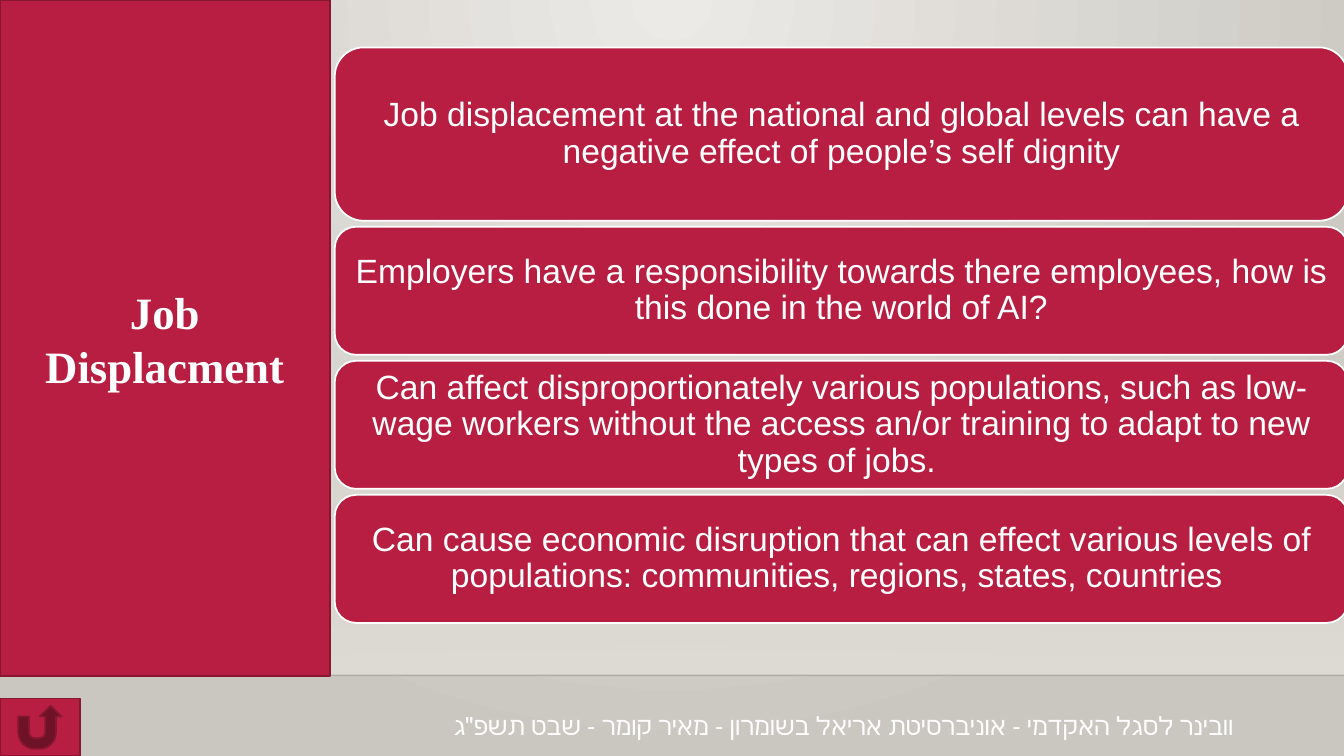
from pptx import Presentation
from pptx.dml.color import RGBColor
from pptx.enum import shapes, text
from pptx.oxml import parse_xml
from pptx.oxml.ns import nsdecls, qn
from pptx.util import Inches, Pt
from lxml import etree

# Content
TITLE = "Job Displacment"
POINTS = [  # wording, height of its box
    ("Job displacement at the national and global levels can have a "
     "negative effect of people’s self dignity", 1.72),
    ("Employers have a responsibility towards there employees, how is "
     "this done in the world of AI?", 1.27),
    ("Can affect disproportionately various populations, such as low-wage "
     "workers without the access an/or training to adapt to new types of jobs. ", 1.27),
    ("Can cause economic disruption that can effect various levels of "
     "populations: communities, regions, states, countries ", 1.27),
]
FOOTER = "וובינר לסגל האקדמי - אוניברסיטת אריאל בשומרון - מאיר קומר - שבט תשפ\"ג"

THEME = {
    "red": "B71E42", "dark_red": "871631", "white": "FFFFFF", "rule": "000001",
    "back": ("ECEAE7", "CAC7C1"), "wall": "DFDBD5",
    "body": "Arial", "heading": "Times New Roman",
    "title_size": 32, "point_size": 24, "footer_size": 18,
    "outline": 1.25,
}
WIDTH, HEIGHT = 13.33, 7.5
FLOOR = 6.7
POINT_LEFT, POINT_TOP, POINT_WIDTH, POINT_GAP = 3.32, 0.47, 10.05, 0.06

prs = Presentation()
prs.slide_width, prs.slide_height = Inches(WIDTH), Inches(HEIGHT)
slide = prs.slides.add_slide(prs.slide_layouts[6])


def rgb(name):
    return RGBColor.from_string(THEME.get(name, name))


def set_alpha(color_element, percent):
    etree.SubElement(color_element, qn("a:alpha")).set("val", str(percent * 1000))


def set_stops(fill, colors):
    fill.gradient()
    for stop, color, position in zip(fill.gradient_stops, colors, (0, 1)):
        stop.color.rgb = rgb(color)
        stop.position = position


def add_block(preset, left, top, width, height, outline):
    block = slide.shapes.add_shape(
        preset, Inches(left), Inches(top), Inches(width), Inches(height))
    block.shadow.inherit = False
    block.fill.solid()
    block.fill.fore_color.rgb = rgb("red")
    block.line.color.rgb = rgb(outline)
    block.line.width = Pt(THEME["outline"])
    return block


def write(shape, wording, font, size, align, bold=False, spacing=None):
    frame = shape.text_frame
    frame.word_wrap = True
    frame.vertical_anchor = text.MSO_ANCHOR.MIDDLE
    paragraph = frame.paragraphs[0]
    paragraph.alignment = align
    paragraph.line_spacing = spacing
    run = paragraph.add_run()
    run.text = wording
    run.font.name = THEME[font]
    run.font.size = Pt(THEME[size])
    run.font.bold = bold
    run.font.color.rgb = rgb("white")


# Background: light spreading from the top centre
set_stops(slide.background.fill, THEME["back"])
glow = slide.background._cSld.find(".//" + qn("a:gradFill"))
glow.replace(glow.find(qn("a:lin")), parse_xml(
    f'<a:path {nsdecls("a")} path="circle">'
    '<a:fillToRect l="43000" t="0" r="43000" b="100000"/></a:path>'))

# Wall fading in towards the floor line
wall_top = 2.21
wall = add_block(shapes.MSO_SHAPE.RECTANGLE, 0, wall_top, WIDTH, FLOOR - wall_top, "wall")
wall.line.fill.background()
set_stops(wall.fill, (THEME["wall"], THEME["wall"]))
wall.fill.gradient_angle = 270
set_alpha(wall._element.spPr.find(".//" + qn("a:srgbClr")), 0)

floor_line = slide.shapes.add_connector(
    shapes.MSO_CONNECTOR.STRAIGHT, 0, Inches(FLOOR), Inches(WIDTH), Inches(FLOOR))
floor_line.line.color.rgb = rgb("rule")
floor_line.line.width = Pt(1)
set_alpha(floor_line._element.spPr.find(".//" + qn("a:srgbClr")), 20)
etree.SubElement(floor_line._element.spPr, qn("a:effectLst"))

# Stacked points
top = POINT_TOP
for wording, height in POINTS:
    point = add_block(shapes.MSO_SHAPE.ROUNDED_RECTANGLE,
                      POINT_LEFT, top, POINT_WIDTH, height, "white")
    write(point, wording, "body", "point_size", text.PP_ALIGN.CENTER, spacing=0.9)
    top += height + POINT_GAP

# Title panel
panel = add_block(shapes.MSO_SHAPE.RECTANGLE, 0, 0, 3.27, 6.71, "dark_red")
write(panel, TITLE, "heading", "title_size", text.PP_ALIGN.CENTER, bold=True)

# Footer and return button
footer = slide.shapes.add_textbox(Inches(4.4), Inches(7.05), Inches(8.76), Inches(0.29))
write(footer, FOOTER, "body", "footer_size", text.PP_ALIGN.LEFT)
add_block(shapes.MSO_SHAPE.ACTION_BUTTON_RETURN, 0, 6.93, 0.79, 0.57, "dark_red")

prs.save("out.pptx")
